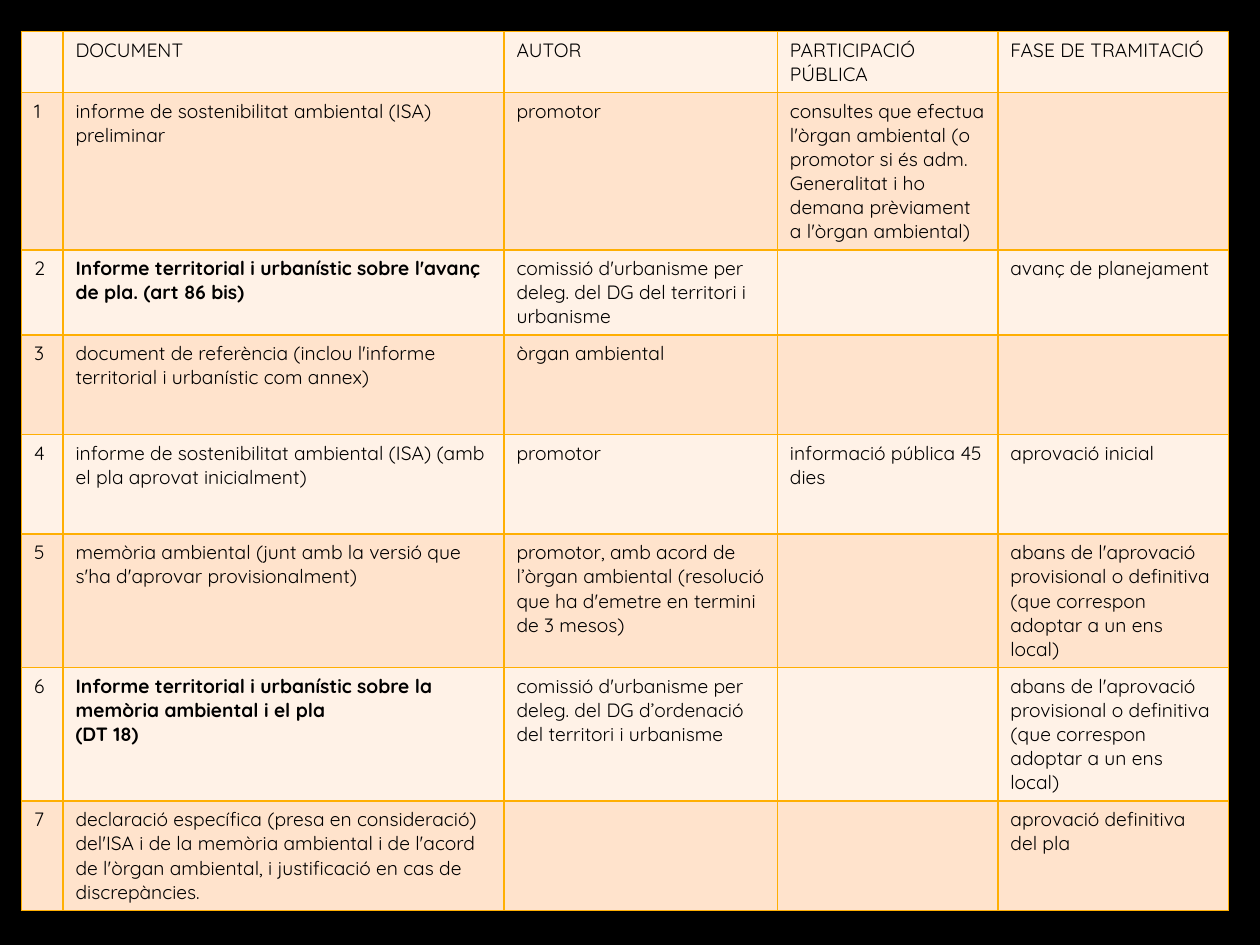
from lxml.etree import SubElement
from pptx import Presentation
from pptx.dml.color import RGBColor
from pptx.oxml.ns import qn
from pptx.util import Inches, Pt

COLORS = {"background": "000000", "text": "000000", "border": "FFAF03",
          "light": "FFF2E7", "dark": "FFE3CC"}
FONT = "Quicksand"

# Content: document, author, public participation, processing phase
HEADER = ("DOCUMENT", "AUTOR", "PARTICIPACIÓ PÚBLICA", "FASE DE TRAMITACIÓ")
BEFORE_APPROVAL = ("abans de l'aprovació provisional o definitiva "
                   "(que correspon adoptar a un ens local)")
STEPS = [
    ("informe de sostenibilitat ambiental (ISA) preliminar", "promotor",
     "consultes que efectua l'òrgan ambiental (o promotor si és adm. "
     "Generalitat i ho demana prèviament a l'òrgan ambiental)", ""),
    ("Informe territorial i urbanístic sobre l'avanç de pla. (art 86 bis)",
     "comissió d'urbanisme per deleg. del DG del territori i urbanisme",
     "", "avanç de planejament"),
    ("document de referència (inclou l'informe territorial i urbanístic com annex)",
     "òrgan ambiental", "", ""),
    ("informe de sostenibilitat ambiental (ISA) (amb el pla aprovat inicialment)",
     "promotor", "informació pública 45 dies", "aprovació inicial"),
    ("memòria ambiental (junt amb la versió que s'ha d'aprovar provisionalment)",
     "promotor, amb acord de l’òrgan ambiental (resolució que ha d'emetre "
     "en termini de 3 mesos)", "", BEFORE_APPROVAL),
    ("Informe territorial i urbanístic sobre la memòria ambiental i el pla\n(DT 18)",
     "comissió d'urbanisme per deleg. del DG d’ordenació del territori i urbanisme",
     "", BEFORE_APPROVAL),
    ("declaració específica (presa en consideració) del'ISA i de la memòria "
     "ambiental i de l'acord de l'òrgan ambiental, i justificació en cas de "
     "discrepàncies.", "", "", "aprovació definitiva del pla"),
]
BOLD_STEPS = (2, 6)

LEFT, TOP, WIDTH, HEIGHT = 0.17, 0.25, 9.58, 6.94
COL_WIDTHS = [0.33, 3.5, 2.17, 1.75, 1.83]
ROW_HEIGHTS = [0.42, 0.75, 0.63, 0.79, 0.79, 0.95, 0.89, 0.79]


def rgb(name):
    return RGBColor.from_string(COLORS[name])


def add_borders(cell):
    tc_pr = cell._tc.get_or_add_tcPr()
    for side in ("a:lnL", "a:lnR", "a:lnT", "a:lnB"):
        ln = SubElement(tc_pr, qn(side), w=str(Pt(1)))
        fill = SubElement(ln, qn("a:solidFill"))
        SubElement(fill, qn("a:srgbClr"), val=COLORS["border"])


def fill_cell(cell, text, color, bold):
    add_borders(cell)
    cell.fill.solid()
    cell.fill.fore_color.rgb = rgb(color)
    cell.text = text
    for p in cell.text_frame.paragraphs:
        p.font.name = FONT
        p.font.size = Pt(11)
        p.font.bold = bold
        p.font.color.rgb = rgb("text")


def main():
    prs = Presentation()
    prs.slide_width, prs.slide_height = Inches(10), Inches(7.5)
    s = prs.slides.add_slide(prs.slide_layouts[6])
    s.background.fill.solid()
    s.background.fill.fore_color.rgb = rgb("background")

    # Table grid
    rows = [("", *HEADER)] + [(str(n), *step) for n, step in enumerate(STEPS, 1)]
    frame = s.shapes.add_table(len(rows), len(COL_WIDTHS), Inches(LEFT),
                               Inches(TOP), Inches(WIDTH), Inches(HEIGHT))
    table = frame.table
    table.first_row = table.horz_banding = False
    for column, width in zip(table.columns, COL_WIDTHS):
        column.width = Inches(width)
    for row, height in zip(table.rows, ROW_HEIGHTS):
        row.height = Inches(height)
    frame.height = Inches(HEIGHT)

    # Cells, with alternating row colours
    for i, texts in enumerate(rows):
        color = "dark" if i % 2 else "light"
        for j, text in enumerate(texts):
            fill_cell(table.cell(i, j), text, color, j == 1 and i in BOLD_STEPS)

    prs.save("out.pptx")


if __name__ == "__main__":
    main()
